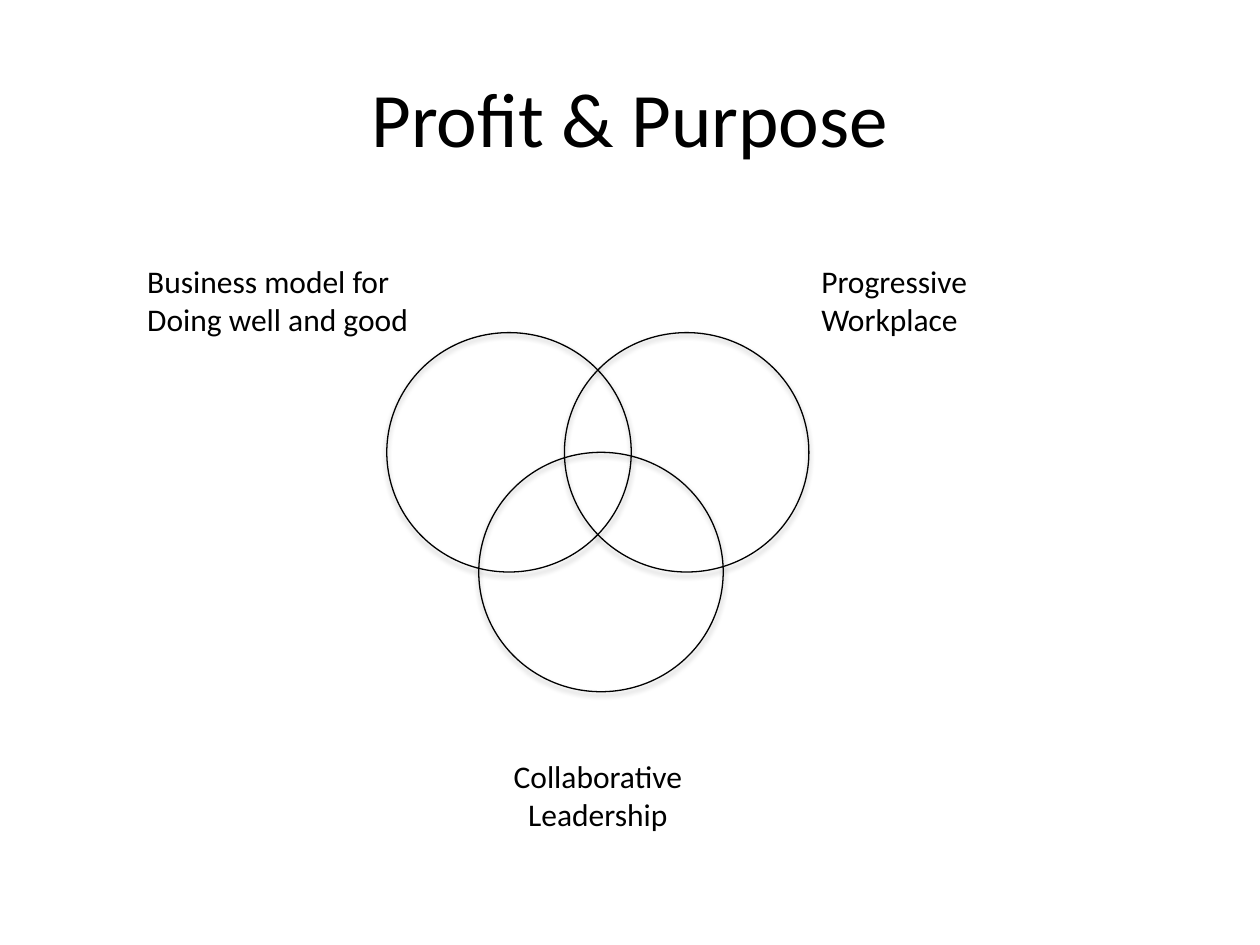
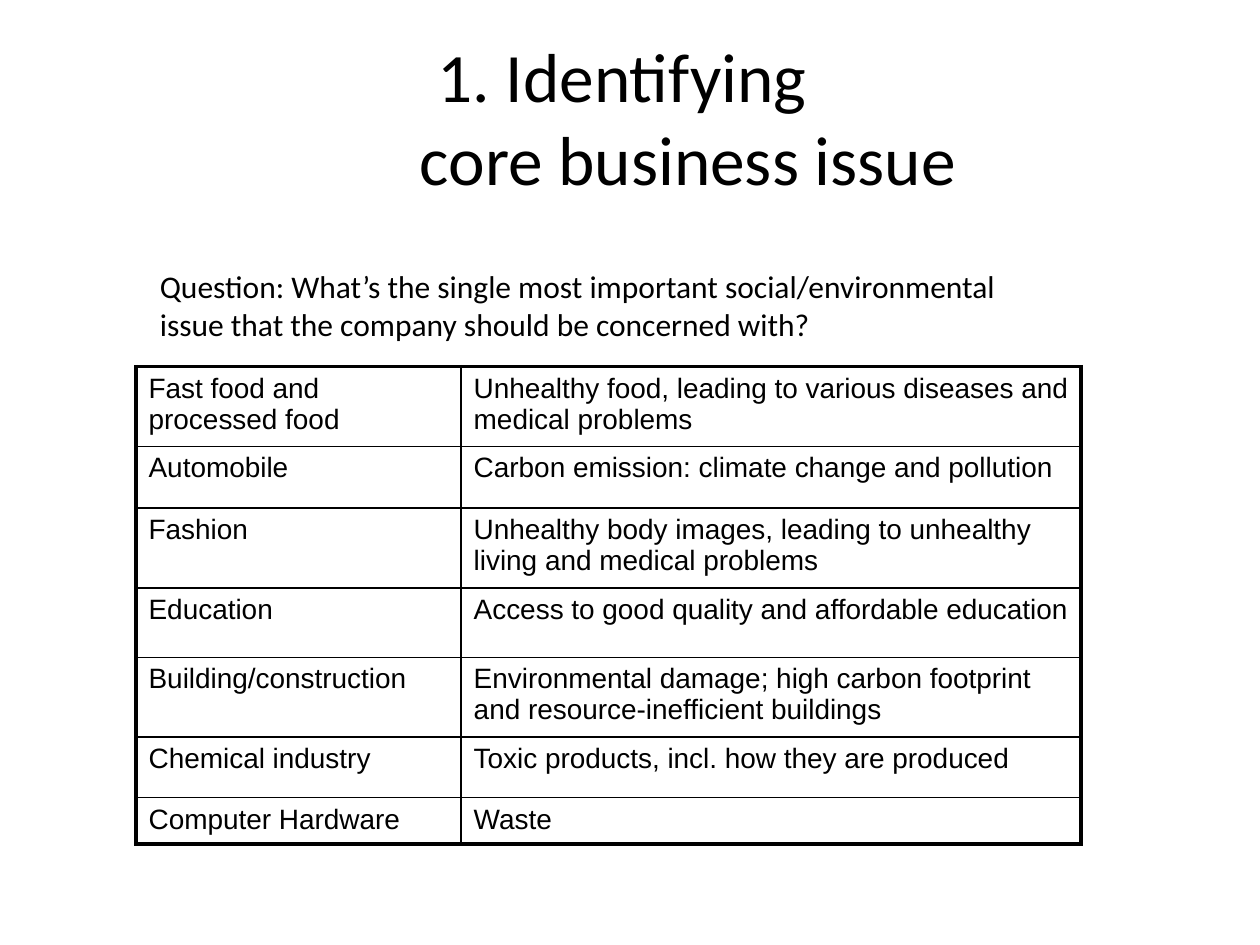
from lxml import etree
from pptx import Presentation
from pptx.dml.color import RGBColor
from pptx.enum.shapes import MSO_SHAPE
from pptx.enum.text import MSO_ANCHOR, MSO_AUTO_SIZE, PP_ALIGN
from pptx.oxml import parse_xml
from pptx.oxml.ns import nsdecls, qn
from pptx.util import Inches, Pt

OVAL = MSO_SHAPE.OVAL
MIDDLE = MSO_ANCHOR.MIDDLE
NO_AUTOFIT, GROW = MSO_AUTO_SIZE.NONE, MSO_AUTO_SIZE.SHAPE_TO_FIT_TEXT
LEFT, CENTER = PP_ALIGN.LEFT, PP_ALIGN.CENTER

THEME = {
    "ink": "000000",
    "title": {"name": "Calibri", "size": Pt(44)},
    "long_title": {"name": "Calibri", "size": Pt(39.6)},
    "body": {"name": "Calibri", "size": Pt(18)},
    "cell": {"name": "Arial", "size": Pt(16)},
    "circle_line": Pt(0.75),
    "outer_border": Pt(2.25),
    "inner_border": Pt(1),
}
INK = RGBColor.from_string(THEME["ink"])


def write(tf, lines, style, align=LEFT):
    """Fill a text frame with one paragraph per line and return the paragraphs."""
    tf.text = "\n".join(lines)
    for p in tf.paragraphs:
        p.alignment = align
        for r in p.runs:
            r.font.color.rgb = INK
            for name, value in THEME[style].items():
                setattr(r.font, name, value)
    return tf.paragraphs


def add_label(s, box, lines, align=LEFT):
    tf = s.shapes.add_textbox(*map(Inches, box)).text_frame
    tf.word_wrap = False
    tf.auto_size = GROW
    write(tf, lines, "body", align)


prs = Presentation()
prs.slide_width, prs.slide_height = Inches(10), Inches(7.5)

# Titles
slides = []
for title, style in [("Profit & Purpose", "title"),
                     ("1. Identifying \vcore business issue", "long_title")]:
    s = prs.slides.add_slide(prs.slide_layouts[5])
    sp = s.shapes.title
    sp.left, sp.top, sp.width, sp.height = map(Inches, (0.5, 0.3, 9, 1.25))
    tf = sp.text_frame
    tf.auto_size = NO_AUTOFIT
    tf.vertical_anchor = MIDDLE
    write(tf, [title], style, CENTER)
    slides.append(s)
venn, issues = slides

# Slide 1: three overlapping circles
for left, top in [(3.07, 2.64), (4.48, 2.64), (3.8, 3.59)]:
    sp = venn.shapes.add_shape(OVAL, *map(Inches, (left, top, 1.94, 1.9)))
    sp.fill.background()
    sp.line.color.rgb = INK
    sp.line.width = THEME["circle_line"]
    sp.shadow.inherit = False
    sp._element.spPr.find(qn("a:effectLst")).append(parse_xml(
        f'<a:outerShdw {nsdecls("a")} blurRad="{Pt(3.1)}" dist="{Pt(1.8)}" '
        f'dir="5400000" rotWithShape="0"><a:srgbClr val="{THEME["ink"]}">'
        '<a:alpha val="35000"/></a:srgbClr></a:outerShdw>'))

add_label(venn, (1.07, 2.03, 2.29, 0.71), ["Business model for", "Doing well and good"])
add_label(venn, (6.42, 2.03, 1.37, 0.71), ["Progressive", "Workplace"])
add_label(venn, (3.97, 5.96, 1.55, 0.71), ["Collaborative", "Leadership"], CENTER)

# Slide 2: question and table of issues by industry
pPr = issues.shapes.title.text_frame.paragraphs[0]._p.get_or_add_pPr()
pPr.set("marL", str(Inches(0.92)))
pPr.set("indent", str(Inches(-0.92)))

add_label(issues, (1.17, 2.07, 7.39, 0.7),
          ["Question: What’s the single most important social/environmental",
           "issue that the company should be concerned with?"])

rows = [
    (0.63, "Fast food and processed food",
     "Unhealthy food, leading to various diseases and medical problems"),
    (0.49, "Automobile", "Carbon emission: climate change and pollution"),
    (0.63, "Fashion",
     "Unhealthy body images, leading to unhealthy living and medical problems"),
    (0.55, "Education", "Access to good quality and affordable education"),
    (0.63, "Building/construction",
     "Environmental damage; high carbon footprint and resource-inefficient buildings"),
    (0.48, "Chemical industry", "Toxic products, incl. how they are produced"),
    (0.36, "Computer Hardware", "Waste"),
]
col_widths = [2.58, 4.92]
total_height = sum(height for height, *_ in rows)
table = issues.shapes.add_table(
    len(rows), len(col_widths), Inches(1.08), Inches(2.91),
    Inches(sum(col_widths)), Inches(total_height)).table
table.first_row = table.horz_banding = False
for col, width in zip(table.columns, col_widths):
    col.width = Inches(width)

for i, (height, *texts) in enumerate(rows):
    table.rows[i].height = Inches(height)
    for j, text in enumerate(texts):
        cell = table.cell(i, j)
        for p in write(cell.text_frame, [text], "cell"):
            p.space_before = Pt(3.2)
        tcPr = cell._tc.get_or_add_tcPr()
        on_edge = {"lnL": j == 0, "lnR": j == len(texts) - 1,
                   "lnT": i == 0, "lnB": i == len(rows) - 1}
        for side, is_outer in on_edge.items():
            width = THEME["outer_border" if is_outer else "inner_border"]
            ln = etree.SubElement(tcPr, qn(f"a:{side}"), w=str(width))
            fill = etree.SubElement(ln, qn("a:solidFill"))
            etree.SubElement(fill, qn("a:srgbClr"), val=THEME["ink"])
        cell.fill.background()

prs.save("out.pptx")
